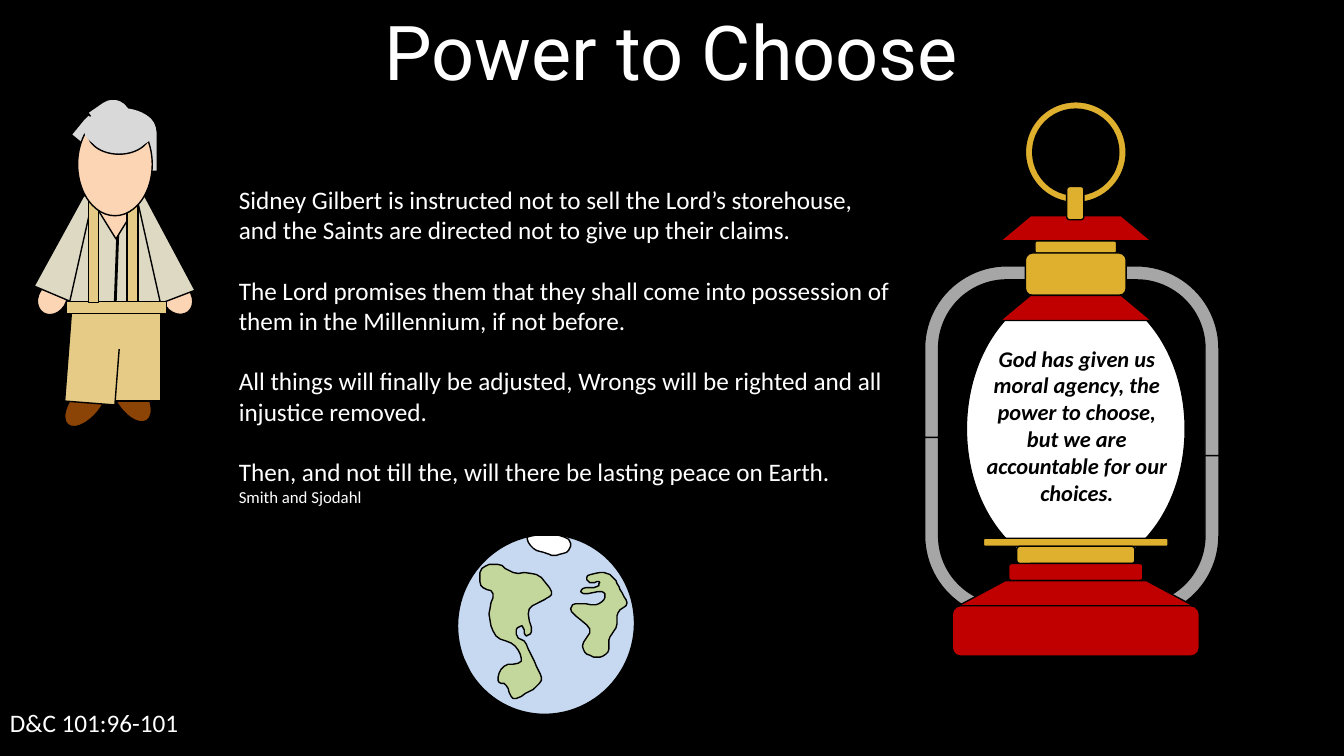
from lxml.etree import SubElement
from pptx import Presentation
from pptx.dml.color import RGBColor
from pptx.enum.shapes import MSO_CONNECTOR, MSO_SHAPE
from pptx.enum.text import MSO_AUTO_SIZE, PP_ALIGN
from pptx.oxml.ns import qn
from pptx.util import Inches, Pt

COLORS = {
    "black": "000000", "white": "FFFFFF", "steel": "A6A6A6", "red": "C00000",
    "gold": "DEB02E", "skin": "FCD5B5", "shoe": "8C4306", "trousers": "E6CB86",
    "shirt": "DDD9C3", "hair": "D9D9D9", "ocean": "C6D9F1", "land": "C3D69B",
}
CELL = Inches(0.01)
COLUMNS, ROWS = 1333, 750

presentation = Presentation()
presentation.slide_width = COLUMNS * CELL
presentation.slide_height = ROWS * CELL
slide = presentation.slides.add_slide(presentation.slide_layouts[6])


def draw(kind, box, color, rotation=0, adjustments=(), outlined=True, flips=()):
    shape = slide.shapes.add_shape(kind, *[int(CELL * length) for length in box])
    shape.shadow.inherit = False
    shape.fill.solid()
    shape.fill.fore_color.rgb = RGBColor.from_string(COLORS[color])
    shape.line.color.rgb = RGBColor.from_string(COLORS["black"])
    shape.line.width = Pt(1)
    if not outlined:
        shape.line.fill.background()
    shape.rotation = rotation
    for index, value in enumerate(adjustments):
        shape.adjustments[index] = value
    for flip in flips:
        shape._element.spPr.find(qn("a:xfrm")).set(flip, "1")


def write(box, lines, color, font="Calibri", align=PP_ALIGN.LEFT, strong=False):
    frame = slide.shapes.add_textbox(*[CELL * length for length in box]).text_frame
    frame.word_wrap = True
    frame.auto_size = MSO_AUTO_SIZE.SHAPE_TO_FIT_TEXT
    for index, (text, size, gap) in enumerate(lines):
        paragraph = frame.add_paragraph() if index else frame.paragraphs[0]
        paragraph.text = text
        paragraph.alignment = align
        paragraph.space_after = Pt(gap)
        paragraph.font.name = font
        paragraph.font.size = Pt(size)
        paragraph.font.bold = paragraph.font.italic = strong
        paragraph.font.color.rgb = RGBColor.from_string(COLORS[color])


ellipse, rectangle = MSO_SHAPE.OVAL, MSO_SHAPE.RECTANGLE
rounded, trapezoid = MSO_SHAPE.ROUNDED_RECTANGLE, MSO_SHAPE.TRAPEZOID
flare, lock = MSO_SHAPE.FLOWCHART_MANUAL_OPERATION, MSO_SHAPE.ROUND_2_DIAG_RECTANGLE

draw(rectangle, (0, 0, COLUMNS, ROWS), "black")
write((12, 0, 1308, 101), [("Power to Choose", 54, 0)], "white", "Roboto", PP_ALIGN.CENTER)
write((0, 697, 667, 40), [("D&C 101:96-101", 18, 0)], "white")

LANTERN_AXIS = 1067
HANDLE_TOP, HANDLE_BOTTOM, HANDLE_WIDTH = 251, 626, 142
HANDLE_BEND = (0.098, 0.139, 0.119, 0.576)
handle_sides = [
    (LANTERN_AXIS, 201, 425, ("flipH",)),
    (LANTERN_AXIS - 150, 183, 409, ()),
]
for left, upper_height, lower_top, flips in handle_sides:
    lower_box = (left, lower_top, HANDLE_WIDTH, HANDLE_BOTTOM - lower_top)
    upper_box = (left, HANDLE_TOP, HANDLE_WIDTH, upper_height)
    draw(MSO_SHAPE.BENT_ARROW, lower_box, "steel", 0, HANDLE_BEND, flips=flips + ("flipV",))
    draw(MSO_SHAPE.BENT_ARROW, upper_box, "steel", 0, HANDLE_BEND, flips=flips)

GLASS_WIDTH, RING_SIZE = 217, 100
draw(ellipse, (LANTERN_AXIS - GLASS_WIDTH / 2, 284, GLASS_WIDTH, 283), "white")
lantern_stacks = {
    214: [
        ("roof", flare, 150, 25, "red"),
        ("collar", rounded, 81, 12, "gold"),
        ("burner", rounded, 100, 42, "gold"),
        ("shoulder", flare, 150, 25, "red"),
    ],
    534: [
        ("plate", rounded, 183, 8, "gold"),
        ("neck", rounded, 117, 17, "gold"),
        ("band", rounded, 133, 17, "red"),
        ("skirt", flare, 233, 25, "red"),
        ("base", rounded, 245, 50, "red"),
    ],
}
for top, stack in lantern_stacks.items():
    for name, kind, width, height, color in stack:
        rotation = 180 if kind == flare else 0
        draw(kind, (LANTERN_AXIS - width / 2, top, width, height), color, rotation)
        top += height
draw(MSO_SHAPE.DONUT, (LANTERN_AXIS - RING_SIZE / 2, 101, RING_SIZE, RING_SIZE),
     "gold", 0, (0.073,))
draw(rounded, (LANTERN_AXIS - 17, 193, 33, 17), "gold", 270)
write((964, 337, 208, 172), [
    ("God has given us moral agency, the power to choose, but we are "
     "accountable for our choices.", 16, 0),
], "black", align=PP_ALIGN.CENTER, strong=True)

BLANK_LINE = 21.6
write((227, 178, 667, 374), [
    ("Sidney Gilbert is instructed not to sell the Lord’s storehouse, and the "
     "Saints are directed not to give up their claims.", 18, BLANK_LINE),
    ("The Lord promises them that they shall come into possession of them in "
     "the Millennium, if not before.", 18, BLANK_LINE),
    ("All things will finally be adjusted, Wrongs will be righted and all "
     "injustice removed.", 18, BLANK_LINE),
    ("Then, and not till the, will there be lasting peace on Earth.", 18, 0),
    ("Smith and Sjodahl", 12, 0),
], "white")

HALF_ROUND = (0.5, 0)
man = [
    ("right hand", ellipse, (162, 279, 28, 34), "skin", 322.3, ()),
    ("left hand", ellipse, (38, 279, 28, 34), "skin", 32.2, ()),
    ("right shoe", ellipse, (115, 365, 30, 57), "shoe", 326.2, ()),
    ("left shoe", ellipse, (71, 371, 29, 57), "shoe", 39.9, ()),
    ("right leg", trapezoid, (104, 301, 55, 97), "trousers", 0, (0,)),
    ("left leg", trapezoid, (68, 297, 50, 103), "trousers", 4.4, (0,)),
    ("left sleeve", trapezoid, (52, 194, 42, 102), "shirt", 22.9, ()),
    ("right sleeve", trapezoid, (134, 194, 42, 105), "shirt", 339, (0.31,)),
    ("shirt", trapezoid, (67, 204, 94, 105), "shirt", 0, ()),
    ("waist", ellipse, (93, 295, 36, 68), "trousers", 264.6, ()),
    ("belt", trapezoid, (66, 299, 99, 12), "trousers", 0, (0,)),
    ("right lock", lock, (106, 120, 59, 41), "hair", 90, HALF_ROUND),
    ("left lock", lock, (78, 113, 47, 40), "hair", 39.3, HALF_ROUND),
    ("neck", trapezoid, (94, 203, 42, 34), "skin", 180, (0.621,)),
    ("top lock", lock, (91, 104, 50, 36), "hair", 55.5, HALF_ROUND),
    ("left brace", rectangle, (88, 197, 10, 103), "trousers", 0, ()),
    ("right brace", rectangle, (126, 199, 11, 100), "trousers", 0, ()),
    ("face", ellipse, (77, 112, 74, 102), "skin", 0, ()),
    ("fringe", ellipse, (87, 111, 62, 42), "hair", 0, ()),
    ("crown", ellipse, (83, 107, 71, 42), "hair", 0, ()),
]
for name, kind, box, color, rotation, adjustments in man:
    draw(kind, box, color, rotation, adjustments, outlined=name not in ("waist", "crown"))
    if name == "shirt":
        placket = slide.shapes.add_connector(
            MSO_CONNECTOR.STRAIGHT, CELL * 117, CELL * 227, CELL * 114, CELL * 309)
        placket.line.color.rgb = RGBColor.from_string(COLORS["black"])
        placket.line.width = Pt(2)
        SubElement(placket._element.spPr, qn("a:effectLst"))

GLOBE_LEFT, GLOBE_TOP = 452, 532
CURVE_STEPS = 4
draw(MSO_SHAPE.CHORD, (GLOBE_LEFT, GLOBE_TOP, 179, 175), "ocean", 112.1, (27, 21.551))
africa = {
    "north": [(147, 36), (131, 39), (133, 46), (142, 45), (140, 50), (126, 52), (127, 57)],
    "west": [(145, 55), (148, 61), (139, 68), (119, 67), (115, 75), (133, 92), (127, 105)],
    "south": [(128, 115), (140, 120), (151, 115), (152, 103)],
    "east": [(159, 91), (161, 76), (170, 66), (163, 53), (157, 42)],
}
americas = {
    "arctic": [(26, 32), (42, 28), (57, 36), (80, 38), (95, 55)],
    "atlantic": [(88, 63), (73, 72), (75, 95)],
    "gulf": [(69, 98), (66, 89), (60, 93), (62, 101), (70, 107)],
    "south": [(80, 129), (85, 143), (73, 154), (57, 161), (50, 148), (42, 143), (48, 129)],
    "pacific": [(65, 124), (59, 109), (40, 99), (33, 77), (37, 57), (25, 49)],
}
ice_cap = {
    "edge": [(71, 1), (77, 12), (90, 17), (100, 19), (112, 14)],
    "pole": [(113, 5), (105, 0), (90, -1)],
}
for coasts, color in ((africa, "land"), (americas, "land"), (ice_cap, "white")):
    landmarks = [point for coast in coasts.values() for point in coast]
    curve = []
    for index in range(len(landmarks)):
        before, start, end, after = [
            landmarks[(index + offset) % len(landmarks)] for offset in (-1, 0, 1, 2)]
        for step in range(CURVE_STEPS):
            t = step / CURVE_STEPS
            curve.append([
                b + (c - a) * t / 2 + (2 * a - 5 * b + 4 * c - d) * t ** 2 / 2
                + (3 * b - a - 3 * c + d) * t ** 3 / 2
                for a, b, c, d in zip(before, start, end, after)])
    outline = [(GLOBE_LEFT + x, GLOBE_TOP + y) for x, y in curve]
    builder = slide.shapes.build_freeform(*outline[0], scale=CELL)
    builder.add_line_segments(outline[1:], close=True)
    land = builder.convert_to_shape()
    land.shadow.inherit = False
    land.fill.solid()
    land.fill.fore_color.rgb = RGBColor.from_string(COLORS[color])
    land.line.color.rgb = RGBColor.from_string(COLORS["black"])
    land.line.width = Pt(1)

presentation.save("out.pptx")
